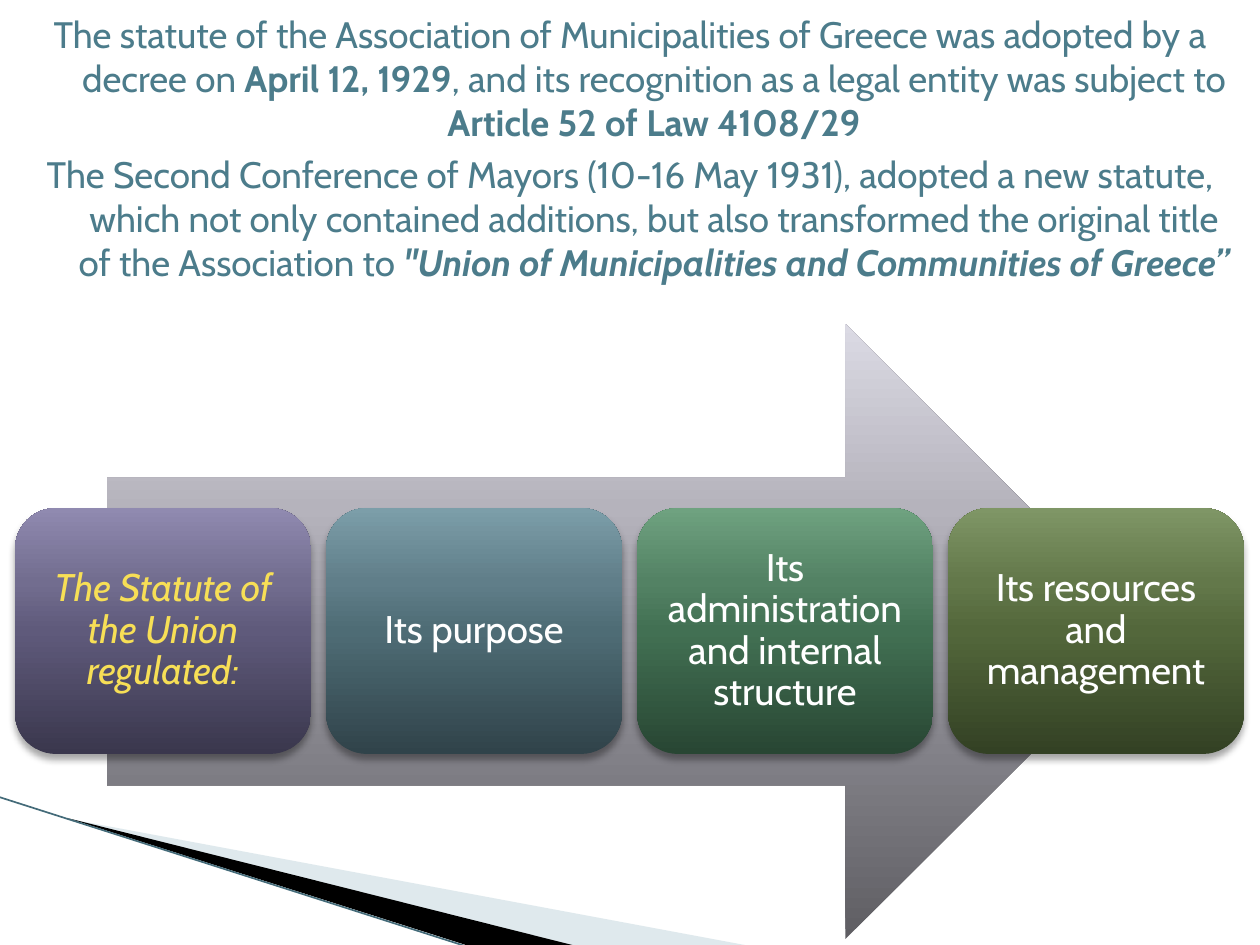
import pptx
import pptx.util
import pptx.oxml
import pptx.oxml.ns
from pptx.dml.color import RGBColor
from pptx.enum.shapes import MSO_CONNECTOR, MSO_SHAPE
from pptx.enum.text import MSO_ANCHOR, PP_ALIGN

PX = 914400 // 126
FONT = "Cabin"
TEAL = RGBColor(0x4C, 0x7C, 0x8B)
YELLOW = RGBColor(0xF7, 0xDF, 0x56)
WHITE = RGBColor(0xFF, 0xFF, 0xFF)
BLACK = RGBColor(0x00, 0x00, 0x00)
PALE_BLUE = RGBColor(0xB1, 0xC9, 0xD2)
LINE_TEAL = RGBColor(0x44, 0x6B, 0x79)

PLAIN, BOLD = {}, {"bold": True}
INTRO = [
    [("The statute of the Association of Municipalities of Greece was adopted by a decree on ", PLAIN),
     ("April 12, 1929", BOLD),
     (", and its recognition as a legal entity was subject to ", PLAIN),
     ("Article 52 of Law 4108/29", BOLD)],
    [("The Second Conference of Mayors (10-16 May 1931), adopted a new statute, which not only "
      "contained additions, but also transformed the original title of the Association to ", PLAIN),
     ("\"Union of Municipalities and Communities of Greece”", {"bold": True, "italic": True})],
]

# Gradient colours run from the bottom to the top, at these stops in percent
STOPS = (0, 50, 70, 100)
ARROW_COLORS = ("5F5E63", "9998A0", "B5B3BC", "DBDAE4")
BOXES = [
    ("The Statute of the Union regulated:", YELLOW, True, ("3A374D", "5F5A7B", "726D8F", "908AB0")),
    ("Its purpose", WHITE, False, ("30434A", "4E6C75", "607E89", "7C9EA9")),
    ("Its administration and internal structure", WHITE, False, ("284633", "427053", "538264", "6FA280")),
    ("Its resources and management", WHITE, False, ("334124", "53673B", "63784A", "7F9666")),
]
BOX_LEFT, BOX_TOP, BOX_W, BOX_H, BOX_PITCH = 15, 508, 296, 246, 311

SWOOSHES = [
    ([(69, 819), (750, 946), (575, 946)], PALE_BLUE, 40),
    ([(67, 818), (576, 946), (469, 946)], BLACK, 100),
]


def px(*values):
    return [v * PX for v in values]


def xml(tag, body="", attrs=""):
    return pptx.oxml.parse_xml(f"<a:{tag} {pptx.oxml.ns.nsdecls('a')} {attrs}>{body}</a:{tag}>")


def add_run(p, text, size, color, **formats):
    r = p.add_run()
    r.text = text
    r.font.color.rgb = color
    for name, value in {"name": FONT, "size": pptx.util.Pt(size), **formats}.items():
        setattr(r.font, name, value)


def set_frame(tf, margins, anchor):
    tf.word_wrap = True
    tf.vertical_anchor = anchor
    for side, value in zip(("left", "top", "right", "bottom"), px(*margins)):
        setattr(tf, "margin_" + side, value)


def add_gradient_shape(s, kind, box, colors):
    sp = s.shapes.add_shape(kind, *px(*box))
    sp.shadow.inherit = False
    sp.line.fill.background()
    stops = "".join(f'<a:gs pos="{pos * 1000}"><a:srgbClr val="{c}"/></a:gs>'
                    for pos, c in zip(STOPS, colors))
    gradient = xml("gradFill", f'<a:gsLst>{stops}</a:gsLst><a:lin ang="16200000" scaled="0"/>')
    sp.element.spPr.find(pptx.oxml.ns.qn("a:prstGeom")).addnext(gradient)
    return sp


def add_drop_shadow(sp):
    blur, dist = pptx.util.Pt(4), pptx.util.Pt(3)
    effects = sp.element.spPr.find(pptx.oxml.ns.qn("a:effectLst"))
    effects.append(xml("outerShdw", '<a:srgbClr val="000000"><a:alpha val="35000"/></a:srgbClr>',
                       f'blurRad="{blur}" dist="{dist}" dir="5400000" rotWithShape="0"'))


def add_corner(s):
    for points, color, alpha in SWOOSHES:
        builder = s.shapes.build_freeform(*points[0], scale=PX)
        builder.add_line_segments(points[1:])
        sp = builder.convert_to_shape()
        sp.shadow.inherit = False
        sp.line.fill.background()
        sp.fill.solid()
        sp.fill.fore_color.rgb = color
        if alpha < 100:
            clr = sp.element.spPr.find(".//" + pptx.oxml.ns.qn("a:srgbClr"))
            clr.append(xml("alpha", attrs=f'val="{alpha * 1000}"'))
    edge = s.shapes.add_connector(MSO_CONNECTOR.STRAIGHT, *px(-1, 797, 468, 947))
    edge.line.color.rgb = LINE_TEAL
    edge.line.width = pptx.util.Pt(0.95)
    edge.element.spPr.append(xml("effectLst"))


def add_boxes(s):
    for i, (text, color, italic, colors) in enumerate(BOXES):
        box = (BOX_LEFT + i * BOX_PITCH, BOX_TOP, BOX_W, BOX_H)
        sp = add_gradient_shape(s, MSO_SHAPE.ROUNDED_RECTANGLE, box, colors)
        add_drop_shadow(sp)
        set_frame(sp.text_frame, (12, 12, 12, 12), MSO_ANCHOR.MIDDLE)
        p = sp.text_frame.paragraphs[0]
        p.alignment = PP_ALIGN.CENTER
        p.line_spacing = 0.9
        add_run(p, text, 22, color, italic=italic)


def add_intro(s):
    tf = s.shapes.add_textbox(*px(15, 6, 1230, 318)).text_frame
    set_frame(tf, (13, 6, 13, 6), MSO_ANCHOR.TOP)
    for i, runs in enumerate(INTRO):
        p = tf.add_paragraph() if i else tf.paragraphs[0]
        p.alignment = PP_ALIGN.CENTER
        if i:
            p.space_before = pptx.util.Pt(4)
        pPr = p._p.get_or_add_pPr()
        pPr.set("marL", str(48 * PX))
        pPr.set("indent", str(-48 * PX))
        for text, formats in runs:
            add_run(p, text, 21, TEAL, **formats)


def main():
    prs = pptx.Presentation()
    prs.slide_width, prs.slide_height = px(1260, 945)
    s = prs.slides.add_slide(prs.slide_layouts[6])
    add_corner(s)
    add_gradient_shape(s, MSO_SHAPE.RIGHT_ARROW, (107, 324, 1046, 615), ARROW_COLORS)
    add_boxes(s)
    add_intro(s)
    prs.save("out.pptx")


if __name__ == "__main__":
    main()
